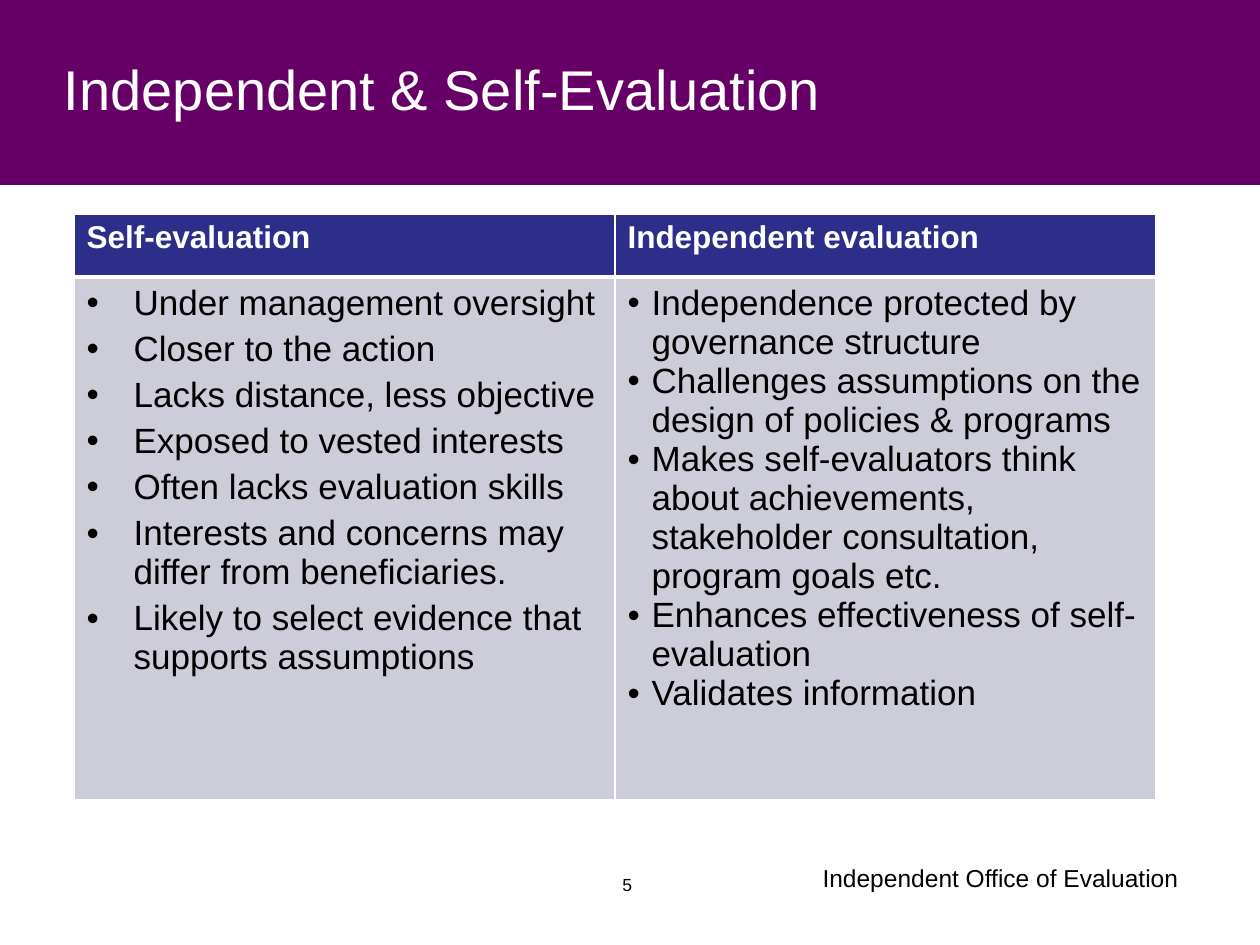
from dataclasses import dataclass

from lxml import etree
from pptx import Presentation
from pptx.dml.color import RGBColor
from pptx.enum import shapes, text
from pptx.oxml import ns
from pptx.util import Emu, Pt

PX = 914400 / 126


@dataclass(frozen=True)
class Theme:
    font: str = "Arial"
    band: str = "660066"
    header: str = "2D2D8A"
    body: str = "CDCDDA"
    light: str = "FFFFFF"
    ink: str = "000000"
    title_size: int = 32
    header_size: int = 18
    body_size: int = 20
    footer_size: int = 14
    number_size: int = 10


THEME = Theme()

HEADINGS = ["Self-evaluation", "Independent evaluation"]
SELF_POINTS = [
    "Under management oversight",
    "Closer to the action",
    "Lacks distance, less objective",
    "Exposed to vested interests",
    "Often lacks evaluation skills",
    "Interests and concerns may differ from beneficiaries.",
    "Likely to select evidence that supports assumptions",
]
INDEPENDENT_POINTS = [
    "Independence protected by governance structure",
    "Challenges assumptions on the design of policies & programs",
    "Makes self-evaluators think about achievements, stakeholder consultation, "
    "program goals etc.",
    "Enhances effectiveness of self-evaluation",
    "Validates information",
]


def px(length):
    return Emu(round(length * PX))


def add_run(paragraph, words, size, color, bold=False):
    run = paragraph.add_run()
    run.text = words
    run.font.name = THEME.font
    run.font.size = Pt(size)
    run.font.bold = bold
    run.font.color.rgb = RGBColor.from_string(color)


def add_label(slide, box, words, size, color, align=text.PP_ALIGN.LEFT, wrap=True):
    shape = slide.shapes.add_textbox(*map(px, box))
    frame = shape.text_frame
    frame.word_wrap = wrap
    paragraph = frame.paragraphs[0]
    paragraph.alignment = align
    add_run(paragraph, words, size, color)
    return frame


def set_bullet(paragraph, indent):
    properties = paragraph._p.get_or_add_pPr()
    properties.set("marL", str(px(indent)))
    properties.set("indent", str(-px(indent)))
    etree.SubElement(properties, ns.qn("a:buFont"), typeface=THEME.font)
    etree.SubElement(properties, ns.qn("a:buChar"), char="•")


def style_cell(cell, color, top, bottom):
    """Set the borders (widths in points), then the fill that follows them."""
    properties = cell._tc.get_or_add_tcPr()
    for side, width in (("L", 1), ("R", 1), ("T", top), ("B", bottom)):
        line = etree.SubElement(properties, ns.qn(f"a:ln{side}"), w=str(Pt(width)))
        fill = etree.SubElement(line, ns.qn("a:solidFill"))
        etree.SubElement(fill, ns.qn("a:srgbClr"), val=THEME.light)
    cell.fill.solid()
    cell.fill.fore_color.rgb = RGBColor.from_string(color)


def fill_points(cell, points, indent, gap):
    frame = cell.text_frame
    for index, words in enumerate(points):
        paragraph = frame.add_paragraph() if index else frame.paragraphs[0]
        set_bullet(paragraph, indent)
        if index and gap:
            paragraph.space_before = Pt(gap)
        add_run(paragraph, words, THEME.body_size, THEME.ink)


def add_title_band(slide, left, top, width, height):
    band = slide.shapes.add_shape(
        shapes.MSO_SHAPE.RECTANGLE, *map(px, (left, top, width, height)))
    band.shadow.inherit = False
    band.fill.solid()
    band.fill.fore_color.rgb = RGBColor.from_string(THEME.band)
    band.line.fill.background()

    frame = add_label(slide, (left + 64, top + 49, width - 89, 116),
                      "Independent & Self-Evaluation", THEME.title_size, THEME.light)
    frame.margin_left = frame.margin_right = frame.margin_bottom = 0
    frame.margin_top = px(6)


def add_comparison(slide, left, top, width, height):
    header_height = 63
    table = slide.shapes.add_table(2, 2, *map(px, (left, top, width, height))).table
    table.horz_banding = False
    table.rows[0].height = px(header_height)
    table.rows[1].height = px(height - header_height)
    for column in table.columns:
        column.width = px(width / 2)

    # Header row
    for column, heading in enumerate(HEADINGS):
        cell = table.cell(0, column)
        style_cell(cell, THEME.header, top=1, bottom=3)
        add_run(cell.text_frame.paragraphs[0], heading,
                THEME.header_size, THEME.light, bold=True)

    # Bulleted columns: points, indent, gap between points
    columns = [(SELF_POINTS, 47, 4), (INDEPENDENT_POINTS, 24, 0)]
    for column, (points, indent, gap) in enumerate(columns):
        cell = table.cell(1, column)
        style_cell(cell, THEME.body, top=3, bottom=1)
        fill_points(cell, points, indent, gap)


def add_footer(slide, left, top, width, height):
    add_label(slide, (left + 198, top, width - 198, height),
              "Independent Office of Evaluation", THEME.footer_size, THEME.ink,
              align=text.PP_ALIGN.RIGHT, wrap=False)
    add_label(slide, (left, top + 11, 110, 34), "5", THEME.number_size, THEME.ink)


def main():
    presentation = Presentation()
    presentation.slide_width = px(1260)
    presentation.slide_height = px(945)
    slide = presentation.slides.add_slide(presentation.slide_layouts[6])
    add_title_band(slide, 0, 0, 1260, 185)
    add_comparison(slide, 74, 214, 1082, 586)
    add_footer(slide, 610, 857, 581, 43)
    presentation.save("out.pptx")


if __name__ == "__main__":
    main()
